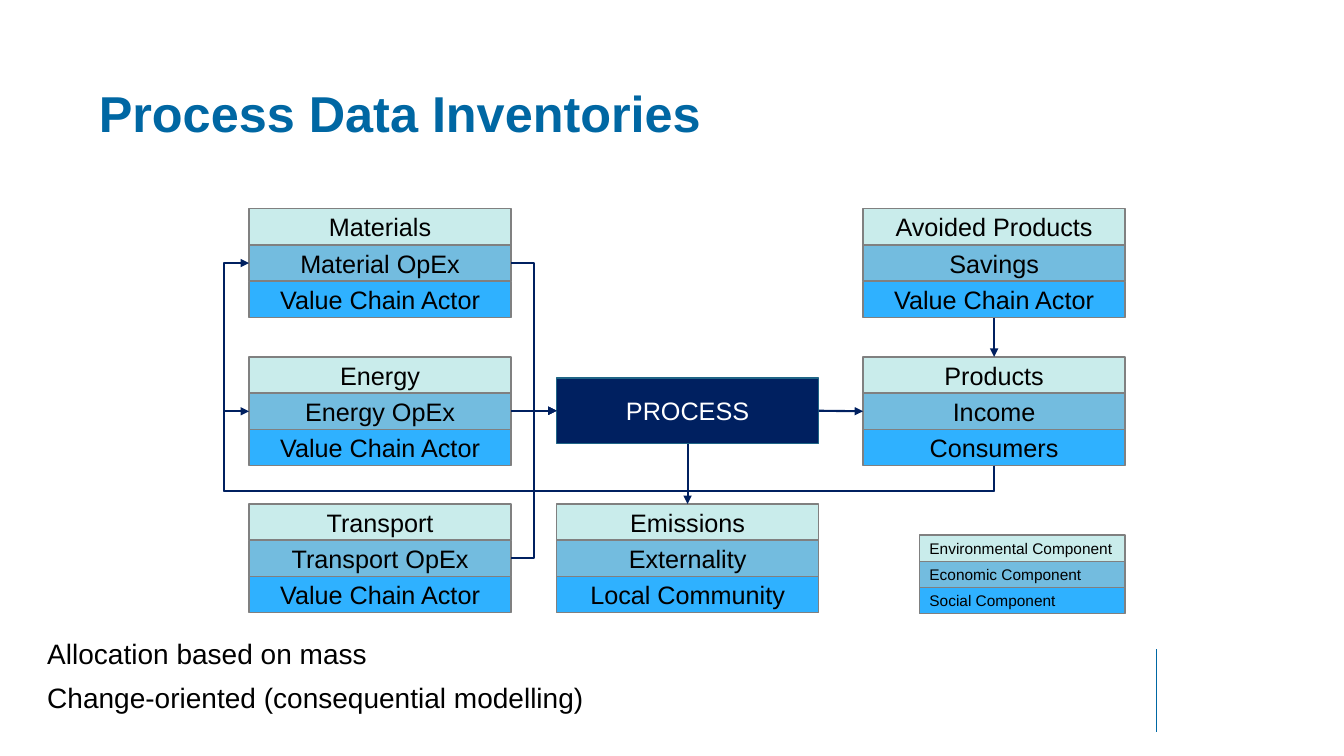
from lxml import etree
from pptx import Presentation
from pptx import util as u
from pptx.dml.color import RGBColor
from pptx.enum import shapes, text
from pptx.oxml import ns

TOP, LEFT, BOTTOM, RIGHT = range(4)  # connection sites of a rectangle
ENVIRONMENTAL, ECONOMIC, SOCIAL = range(3)  # rows of a stack


def color(hex_code):
    return RGBColor.from_string(hex_code)


def write(frame, lines, size=18, ink="000000", bold=False, align=text.PP_ALIGN.LEFT,
          anchor=text.MSO_ANCHOR.MIDDLE, spacing=1.0, gap=0):
    frame.word_wrap = True
    frame.auto_size = text.MSO_AUTO_SIZE.NONE
    frame.vertical_anchor = anchor
    for i, line in enumerate(lines):
        paragraph = frame.add_paragraph() if i else frame.paragraphs[0]
        paragraph.text = line
        paragraph.alignment = align
        paragraph.line_spacing = spacing
        paragraph.space_before = u.Pt(gap if i else 0)
        font = paragraph.font
        font.name, font.size, font.bold = "Arial", u.Pt(size), bold
        font.color.rgb = color(ink)


class Diagram:
    NAVY, BLUE, GREY = "002060", "0067A3", "808080"
    ROW_FILLS = ("C9ECEB", "73BCDF", "2FB1FF")

    def __init__(self, slide):
        self.slide = slide

    def title(self, wording, left, top, width, height):
        title = self.slide.shapes.title
        title.left, title.top = u.Inches(left), u.Inches(top)
        title.width, title.height = u.Inches(width), u.Inches(height)
        write(title.text_frame, [wording], size=36, ink=self.BLUE, bold=True, spacing=0.9)

    def notes(self, lines, left, top, width, height):
        notes = self.slide.shapes.add_textbox(*map(u.Inches, (left, top, width, height)))
        write(notes.text_frame, lines, size=20, anchor=text.MSO_ANCHOR.TOP,
              spacing=0.9, gap=10)

    def box(self, wording, left, top, width, height, fill, border, parent=None, **style):
        box = (parent or self.slide).shapes.add_shape(
            shapes.MSO_SHAPE.RECTANGLE, *map(u.Inches, (left, top, width, height)))
        box.shadow.inherit = False
        box.fill.solid()
        box.fill.fore_color.rgb = color(fill)
        box.line.color.rgb = color(border)
        box.line.width = u.Pt(1)
        write(box.text_frame, [wording], **style)
        return box

    def stack(self, labels, left, top, width=2.6, row=0.36, size=18,
              align=text.PP_ALIGN.CENTER):
        group = self.slide.shapes.add_group_shape()
        return [self.box(label, left, top + i * row, width, row, fill, self.GREY,
                         parent=group, size=size, align=align)
                for i, (label, fill) in enumerate(zip(labels, self.ROW_FILLS))]

    def line(self, x1, y1, x2, y2, ink, weight, kind=shapes.MSO_CONNECTOR.STRAIGHT):
        line = self.slide.shapes.add_connector(kind, *map(u.Inches, (x1, y1, x2, y2)))
        line.line.color.rgb = color(ink)
        line.line.width = u.Pt(weight)
        etree.SubElement(line._element.spPr, ns.qn("a:effectLst"))
        return line

    def arrow(self, source, source_site, target, target_site, elbow=False):
        kind = shapes.MSO_CONNECTOR.ELBOW if elbow else shapes.MSO_CONNECTOR.STRAIGHT
        arrow = self.line(0, 0, 1, 1, self.NAVY, 1.5, kind)
        arrow.begin_connect(source, source_site)
        arrow.end_connect(target, target_site)
        etree.SubElement(arrow.line._get_or_add_ln(), ns.qn("a:tailEnd"), type="triangle")
        return arrow

    def feedback(self, source, target, clearance=0.25):
        """Run below the source, then up the left side into the target."""
        arrow = self.arrow(source, BOTTOM, target, LEFT, elbow=True)
        across, rise = arrow.begin_x - arrow.end_x, arrow.begin_y - arrow.end_y
        center_x = (arrow.begin_x + arrow.end_x) // 2
        center_y = (arrow.begin_y + arrow.end_y) // 2
        # The frame is turned a quarter, so width and height swap
        arrow.width, arrow.height = rise, across
        arrow.left, arrow.top = center_x - rise // 2, center_y - across // 2
        frame = arrow._element.spPr.find(ns.qn("a:xfrm"))
        frame.attrib.pop("flipV", None)
        frame.set("flipH", "1")
        frame.set("rot", "5400000")
        geometry = arrow._element.spPr.find(ns.qn("a:prstGeom"))
        geometry.set("prst", "bentConnector4")
        guides = geometry.find(ns.qn("a:avLst"))
        reach = u.Inches(clearance)
        for name, ratio in (("adj1", -reach / rise), ("adj2", 1 + reach / across)):
            etree.SubElement(guides, ns.qn("a:gd"), name=name,
                             fmla=f"val {round(ratio * 100000)}")


def main():
    deck = Presentation()
    deck.slide_width, deck.slide_height = u.Inches(13.33), u.Inches(7.5)
    diagram = Diagram(deck.slides.add_slide(deck.slide_layouts.get_by_name("Title Only")))

    # Heading and footer rule
    diagram.title("Process Data Inventories", 0.88, 0.84, 11.81, 0.62)
    diagram.line(11.47, 6.44, 11.47, 7.26, diagram.BLUE, 0.5)

    # Process and its stacks, on three columns and three rows
    inputs_x, process_x, outputs_x = 2.47, 5.52, 8.56
    upper, middle, lower = 2.07, 3.54, 5.0
    process = diagram.box("PROCESS", process_x, 3.75, 2.6, 0.65, diagram.NAVY, "1F6586",
                          ink="FFFFFF", align=text.PP_ALIGN.CENTER)
    materials, energy, transport = inputs = [
        diagram.stack((name, f"{cost} OpEx", "Value Chain Actor"), inputs_x, top)
        for name, cost, top in (("Materials", "Material", upper),
                                ("Energy", "Energy", middle),
                                ("Transport", "Transport", lower))]
    emissions = diagram.stack(("Emissions", "Externality", "Local Community"),
                              process_x, lower)
    products = diagram.stack(("Products", "Income", "Consumers"), outputs_x, middle)
    avoided = diagram.stack(("Avoided Products", "Savings", "Value Chain Actor"),
                            outputs_x, upper)

    # Legend
    diagram.stack([f"{kind} Component" for kind in ("Environmental", "Economic", "Social")],
                  9.12, 5.31, width=2.04, row=0.26, size=11, align=text.PP_ALIGN.LEFT)

    # Flows
    for stack in inputs:
        diagram.arrow(stack[ECONOMIC], RIGHT, process, LEFT, elbow=True)
    diagram.arrow(process, BOTTOM, emissions[ENVIRONMENTAL], TOP)
    diagram.arrow(process, RIGHT, products[ECONOMIC], LEFT)
    diagram.arrow(avoided[SOCIAL], BOTTOM, products[ENVIRONMENTAL], TOP)
    for stack in (energy, materials):
        diagram.feedback(products[SOCIAL], stack[ECONOMIC])

    # Modelling notes
    diagram.notes(("Allocation based on mass", "Change-oriented (consequential modelling)"),
                  0.37, 6.3, 5.71, 0.92)

    deck.save("out.pptx")


if __name__ == "__main__":
    main()
